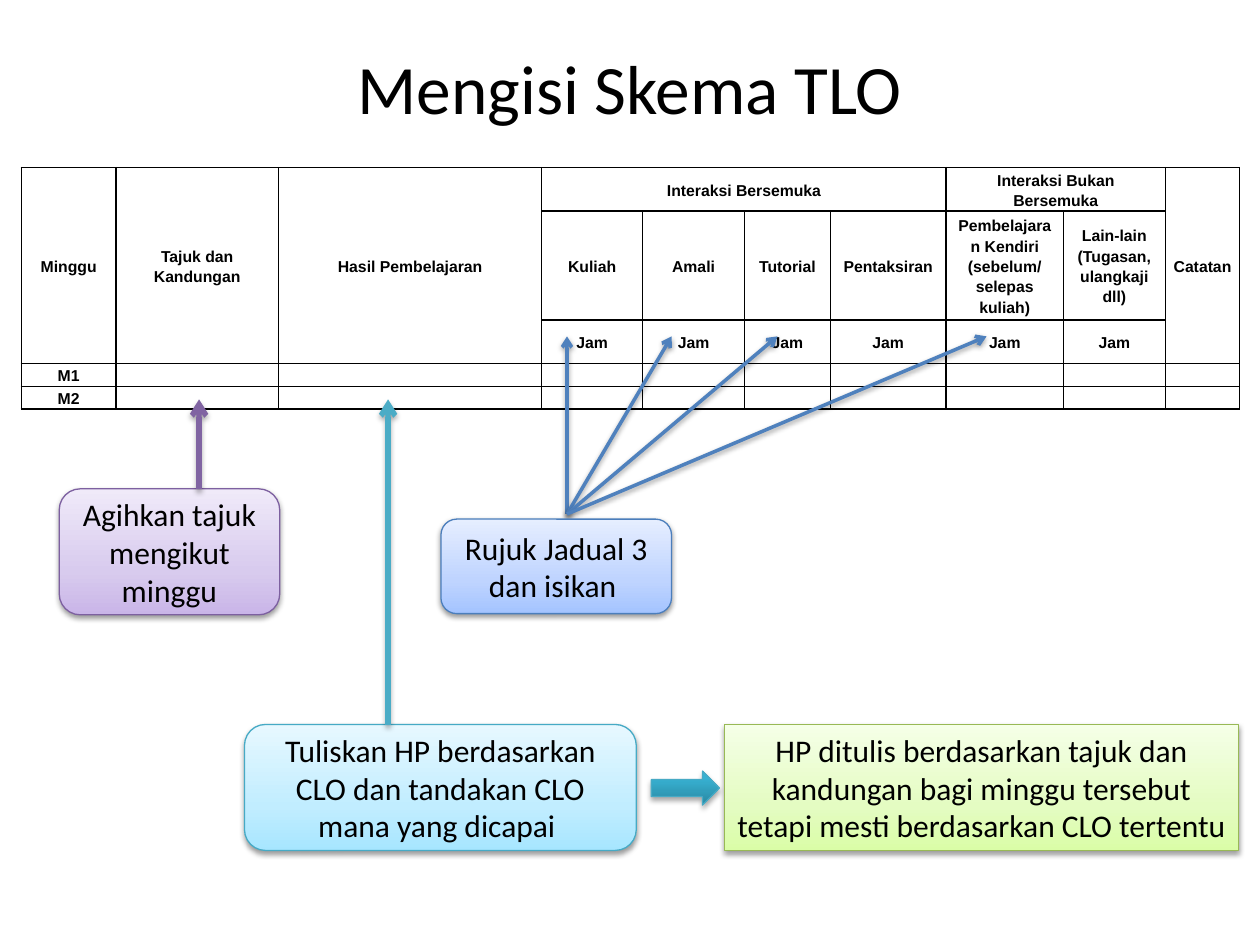
from copy import deepcopy

from lxml import etree
from pptx import Presentation
from pptx.dml.color import RGBColor
from pptx.enum.shapes import MSO_CONNECTOR, MSO_SHAPE
from pptx.enum.text import MSO_ANCHOR, PP_ALIGN
from pptx.oxml.ns import qn
from pptx.util import Inches, Pt

STRAIGHT = MSO_CONNECTOR.STRAIGHT
ROUNDED = MSO_SHAPE.ROUNDED_RECTANGLE
RECTANGLE = MSO_SHAPE.RECTANGLE
RIGHT_ARROW = MSO_SHAPE.RIGHT_ARROW
MIDDLE = MSO_ANCHOR.MIDDLE
CENTER = PP_ALIGN.CENTER

SOFT_SHADOW = {"blur": 3.1, "dist": 1.6, "alpha": 38}
DEEP_SHADOW = {"blur": 3.1, "dist": 1.8, "alpha": 35}

PURPLE = (("C9B5E8", 0), ("D8CBEE", 0.35), ("F0EAF9", 1))
BLUE = (("A4C4FF", 0), ("BFD4FF", 0.35), ("E6EEFF", 1))
AQUA = (("A7E6FF", 0), ("C1EDFF", 0.35), ("E7F8FF", 1))
GREEN = (("DAFDA7", 0), ("E4FCC2", 0.35), ("F5FFE7", 1))
TEAL = (("2A88A2", 0), ("37B1D2", 0.8), ("34B4D6", 1))

COLUMN_WIDTHS = (0.75, 1.29, 2.09, 0.8, 0.81, 0.68, 0.92, 0.93, 0.81, 0.59)
ROW_HEIGHTS = (0.32, 0.81, 0.32, 0.18, 0.18)
SCHEDULE = (
    ("Minggu", "Tajuk dan Kandungan", "Hasil Pembelajaran", "Interaksi Bersemuka",
     "", "", "", "Interaksi Bukan Bersemuka", "", "Catatan"),
    ("", "", "", "Kuliah", "Amali", "Tutorial", "Pentaksiran",
     "Pembelajaran Kendiri (sebelum/ selepas kuliah)",
     "Lain-lain (Tugasan, ulangkaji dll)", ""),
    ("",) * 3 + ("Jam",) * 6 + ("",),
    ("M1",) + ("",) * 9,
    ("M2",) + ("",) * 9,
)
MERGES = [((0, column), (2, column)) for column in (0, 1, 2, 9)]
MERGES += [((0, 3), (0, 6)), ((0, 7), (0, 8))]


def rgb(value):
    return RGBColor.from_string(value)


def apply(target, values):
    for name, value in values.items():
        setattr(target, name, value)


class SlideBuilder:
    ink = "000000"
    cell_format = {
        "vertical_anchor": MIDDLE,
        "margin_left": Inches(0.06),
        "margin_right": Inches(0.06),
        "margin_top": 0,
        "margin_bottom": 0,
    }
    cell_font = {"name": "Arial", "size": Pt(9), "bold": True}
    frame_format = {"word_wrap": True, "vertical_anchor": MIDDLE}

    def __init__(self, slide):
        self.slide = slide

    def put_text(self, frame, text, font, spacing=None):
        paragraph = frame.paragraphs[0]
        apply(paragraph, {"alignment": CENTER, "line_spacing": spacing})
        if text:
            run = paragraph.add_run()
            run.text = text
            apply(run.font, font)
            run.font.color.rgb = rgb(self.ink)
        else:
            ending = paragraph._p.get_or_add_endParaRPr()
            ending.set("sz", str(int(font["size"].pt * 100)))

    def title(self, text, box):
        frame = self.slide.shapes.add_textbox(*map(Inches, box)).text_frame
        apply(frame, self.frame_format)
        self.put_text(frame, text, {"name": "Calibri", "size": Pt(39.6)})

    def cast_shadow(self, effects, blur, dist, alpha):
        shadow = etree.SubElement(
            effects, qn("a:outerShdw"), blurRad=str(Pt(blur)), dist=str(Pt(dist)),
            dir="5400000", rotWithShape="0")
        color = etree.SubElement(shadow, qn("a:srgbClr"), val=self.ink)
        etree.SubElement(color, qn("a:alpha"), val=str(alpha * 1000))

    def block(self, kind, box, gradient, outline, text=None, shadow=SOFT_SHADOW):
        shape = self.slide.shapes.add_shape(kind, *map(Inches, box))
        properties = shape._element.spPr
        shape.fill.gradient()
        shape.fill.gradient_angle = 90
        stops = properties.find(".//" + qn("a:gsLst"))
        stops.append(deepcopy(stops[0]))
        for stop, (color, position) in zip(shape.fill.gradient_stops, gradient):
            stop.color.rgb = rgb(color)
            stop.position = position
        shape.line.color.rgb = rgb(outline)
        shape.line.width = Pt(0.75)
        shape.shadow.inherit = False
        self.cast_shadow(properties.find(qn("a:effectLst")), **shadow)
        if text:
            apply(shape.text_frame, self.frame_format)
            self.put_text(shape.text_frame, text, {"name": "Calibri", "size": Pt(18)})

    def arrow(self, start, end, color, width, shadow):
        points = map(Inches, (*start, *end))
        connector = self.slide.shapes.add_connector(STRAIGHT, *points)
        connector.line.color.rgb = rgb(color)
        connector.line.width = Pt(width)
        properties = connector._element.spPr
        etree.SubElement(properties.find(qn("a:ln")), qn("a:tailEnd"), type="arrow")
        self.cast_shadow(etree.SubElement(properties, qn("a:effectLst")), **shadow)

    def border(self, cell):
        properties = cell._tc.get_or_add_tcPr()
        for side in ("lnL", "lnR", "lnT", "lnB"):
            line = etree.SubElement(properties, qn("a:" + side), w=str(Pt(1)))
            fill = etree.SubElement(line, qn("a:solidFill"))
            etree.SubElement(fill, qn("a:srgbClr"), val=self.ink)

    def table(self, left, top, widths, heights, rows, merges):
        box = map(Inches, (left, top, sum(widths), sum(heights)))
        table = self.slide.shapes.add_table(len(rows), len(widths), *box).table
        apply(table, {"first_row": False, "horz_banding": False})
        for column, width in zip(table.columns, widths):
            column.width = Inches(width)
        for row, height, texts in zip(table.rows, heights, rows):
            row.height = Inches(height)
            for cell, text in zip(row.cells, texts):
                apply(cell, self.cell_format)
                self.border(cell)
                cell.fill.background()
                self.put_text(cell.text_frame, text, self.cell_font, 1.15)
        for first, last in merges:
            table.cell(*first).merge(table.cell(*last))


def main():
    deck = Presentation()
    apply(deck, {"slide_width": Inches(10), "slide_height": Inches(7.5)})
    page = SlideBuilder(deck.slides.add_slide(deck.slide_layouts[6]))

    page.title("Mengisi Skema TLO", (0.5, 0.3, 9, 0.78))
    page.table(0.17, 1.33, COLUMN_WIDTHS, ROW_HEIGHTS, SCHEDULE, MERGES)

    for hours_x in (4.5, 5.33, 6.17, 7.83):
        page.arrow((4.5, 4.08), (hours_x, 2.67), "4F81BD", 2, SOFT_SHADOW)
    page.block(ROUNDED, (3.5, 4.12, 1.83, 0.75), BLUE, "4B7EBC",
               "Rujuk Jadual 3 dan isikan ")

    page.block(ROUNDED, (0.47, 3.88, 1.75, 1), PURPLE, "7D60A0",
               "Agihkan tajuk mengikut minggu")
    page.arrow((1.58, 3.88), (1.58, 3.17), "8064A2", 3, DEEP_SHADOW)

    page.block(ROUNDED, (1.94, 5.75, 3.11, 1), AQUA, "46AAC5",
               "Tuliskan HP berdasarkan CLO dan tandakan CLO mana yang dicapai ")
    page.arrow((3.08, 5.75), (3.08, 3.17), "4BACC6", 3, DEEP_SHADOW)

    page.block(RECTANGLE, (5.75, 5.75, 4.08, 1), GREEN, "98B955",
               "HP ditulis berdasarkan tajuk dan kandungan bagi minggu tersebut "
               "tetapi mesti berdasarkan CLO tertentu")
    page.block(RIGHT_ARROW, (5.17, 6.12, 0.54, 0.27), TEAL, "46AAC5",
               shadow=DEEP_SHADOW)

    deck.save("out.pptx")


if __name__ == "__main__":
    main()
